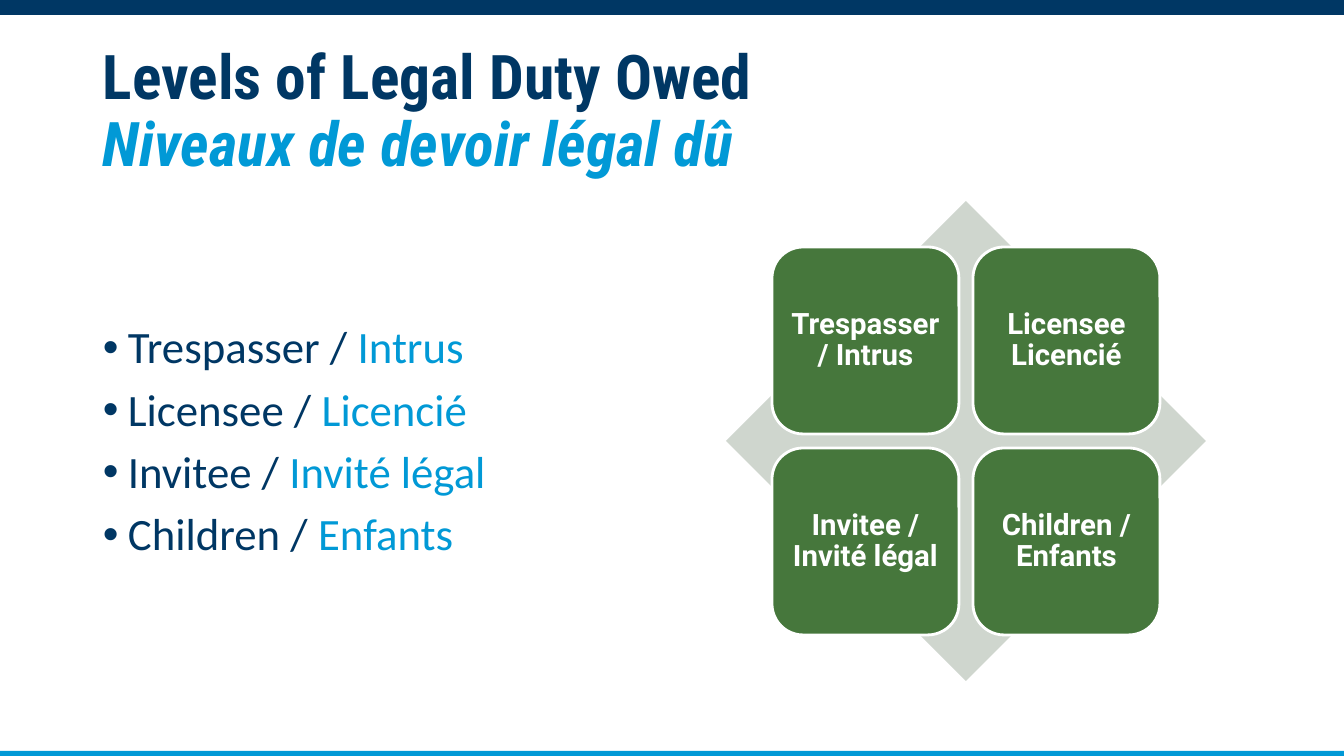
from lxml import etree
from pptx import Presentation
from pptx.dml.color import RGBColor
from pptx.enum.shapes import MSO_SHAPE
from pptx.enum.text import MSO_ANCHOR, PP_ALIGN
from pptx.oxml.ns import qn
from pptx.util import Pt

PX = 914400 / 100.8
PAGE_WIDTH, PAGE_HEIGHT = 1344, 756

NAVY = RGBColor(0x00, 0x37, 0x64)
BLUE = RGBColor(0x01, 0x99, 0xD6)
GREEN = RGBColor(0x46, 0x77, 0x3C)
SAGE = RGBColor(0xCF, 0xD6, 0xCE)
WHITE = RGBColor(0xFF, 0xFF, 0xFF)

TITLE_FONT = {"name": "Roboto Condensed", "size": Pt(44), "bold": True}
LIST_FONT = {"name": "Calibri", "size": Pt(32)}
TILE_FONT = {"name": "Roboto", "size": Pt(21), "bold": True}

DUTIES = [
    ("Trespasser / ", "Intrus"),
    ("Licensee / ", "Licencié"),
    ("Invitee / ", "Invité légal"),
    ("Children / ", "Enfants"),
]
TILE_LABELS = ["Trespasser / Intrus", "Licensee Licencié",
               "Invitee / Invité légal", "Children / Enfants"]


def px(length):
    return round(length * PX)


def set_all(target, values):
    for name, value in values.items():
        setattr(target, name, value)


def add_span(para, text, color, font, **extra):
    span = para.add_run()
    span.text = text
    set_all(span.font, {**font, **extra})
    span.font.color.rgb = color


def add_filled(page, kind, box, fill):
    """Add a preset shape without outline or shadow."""
    shape = page.shapes.add_shape(kind, *map(px, box))
    shape.shadow.inherit = False
    shape.fill.solid()
    shape.fill.fore_color.rgb = fill
    shape.line.fill.background()
    return shape


def add_text_frame(page, box, anchor):
    frame = page.shapes.add_textbox(*map(px, box)).text_frame
    set_all(frame, {"word_wrap": True, "vertical_anchor": anchor})
    return frame


def set_bullet(para, indent):
    properties = para._p.get_or_add_pPr()
    properties.set("marL", str(px(indent)))
    properties.set("indent", str(-px(indent)))
    for tag, attribute, value in (("a:buFont", "typeface", "Arial"),
                                  ("a:buChar", "char", "•")):
        etree.SubElement(properties, qn(tag)).set(attribute, value)


def add_edge_bars(page, width, height):
    add_filled(page, MSO_SHAPE.RECTANGLE, (0, height - 5, width, 5), BLUE)
    add_filled(page, MSO_SHAPE.RECTANGLE, (0, 0, width, 15), NAVY)


def add_title(page, box):
    para = add_text_frame(page, box, MSO_ANCHOR.MIDDLE).paragraphs[0]
    para.line_spacing = 0.9
    add_span(para, "Levels of Legal Duty Owed", NAVY, TITLE_FONT)
    para.add_line_break()
    add_span(para, "Niveaux de devoir légal dû", BLUE, TITLE_FONT, italic=True)


def add_duty_list(page, box):
    frame = add_text_frame(page, box, MSO_ANCHOR.TOP)
    for index, (english, french) in enumerate(DUTIES):
        para = frame.add_paragraph() if index else frame.paragraphs[0]
        set_bullet(para, 25)
        para.line_spacing = 0.9
        if index:
            para.space_before = Pt(10)
        add_span(para, english, NAVY, LIST_FONT)
        add_span(para, french, BLUE, LIST_FONT)


def add_tile(page, box, label):
    tile = add_filled(page, MSO_SHAPE.ROUNDED_RECTANGLE, box, GREEN)
    tile.line.color.rgb = WHITE
    tile.line.width = Pt(2)
    frame = tile.text_frame
    sides = ("left", "top", "right", "bottom")
    set_all(frame, {f"margin_{side}": px(9) for side in sides})
    set_all(frame, {"word_wrap": True, "vertical_anchor": MSO_ANCHOR.MIDDLE})
    para = frame.paragraphs[0]
    set_all(para, {"alignment": PP_ALIGN.CENTER, "line_spacing": 0.9})
    add_span(para, label, WHITE, TILE_FONT)


def add_duty_matrix(page, left, top, size):
    """Draw a diamond with a centred two-by-two grid of tiles on it."""
    add_filled(page, MSO_SHAPE.DIAMOND, (left, top, size, size), SAGE)
    margin, gap = 46, 14
    side = (size - 2 * margin - gap) // 2
    for index, label in enumerate(TILE_LABELS):
        row, column = divmod(index, 2)
        tile_left = left + margin + column * (side + gap)
        tile_top = top + margin + row * (side + gap)
        add_tile(page, (tile_left, tile_top, side, side), label)


def main():
    deck = Presentation()
    set_all(deck, {"slide_width": px(PAGE_WIDTH), "slide_height": px(PAGE_HEIGHT)})
    page = deck.slides.add_slide(deck.slide_layouts[6])
    add_edge_bars(page, PAGE_WIDTH, PAGE_HEIGHT)
    add_duty_list(page, (93, 320, 430, 278))
    add_title(page, (93, 40, 980, 146))
    add_duty_matrix(page, 726, 201, 480)
    deck.save("out.pptx")


if __name__ == "__main__":
    main()
